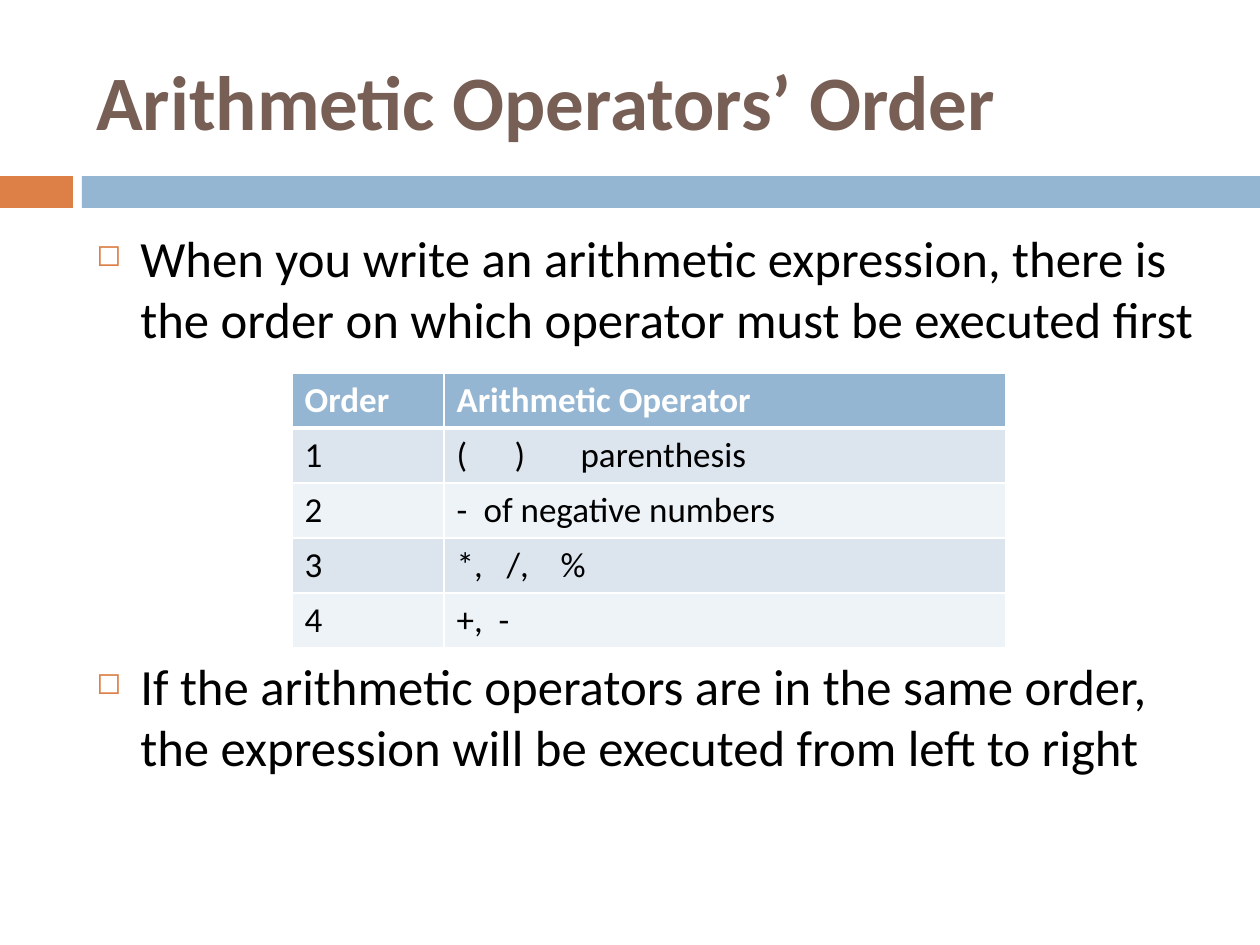
import dataclasses

import lxml.etree
import pptx
import pptx.dml.color
import pptx.enum.shapes
import pptx.enum.text
import pptx.oxml.ns
import pptx.util

PIXELS_PER_INCH = 126


@dataclasses.dataclass(frozen=True)
class Theme:
    """Hold the colours and type sizes of the slide."""
    font: str = "Calibri"
    title_color: str = "775F55"
    accent: str = "DD8047"
    blue: str = "94B6D2"
    white: str = "FFFFFF"
    black: str = "000000"
    bands: tuple = ("DCE5EE", "EEF3F7")
    title_size: int = 44
    body_size: int = 29
    table_size: int = 20


THEME = Theme()


def px(length):
    """Turn pixels into EMU."""
    return pptx.util.Emu(round(length * 914400 / PIXELS_PER_INCH))


def rgb(color):
    """Turn a hex string into a colour."""
    return pptx.dml.color.RGBColor.from_string(color)


def add_element(parent, tag, **attributes):
    """Append a DrawingML child and return it."""
    element = lxml.etree.SubElement(parent, pptx.oxml.ns.qn(tag))
    for name, value in attributes.items():
        element.set(name, str(value))
    return element


def style_font(paragraph, size, color, bold=False):
    """Set the font of a whole paragraph."""
    font = paragraph.font
    font.name = THEME.font
    font.size = pptx.util.Pt(size)
    font.bold = bold
    font.color.rgb = rgb(color)


def add_text_frame(slide, box):
    """Add a wrapping text box and return its text frame."""
    frame = slide.shapes.add_textbox(*map(px, box)).text_frame
    frame.word_wrap = True
    return frame


def add_title(slide, box, text):
    """Place the slide title."""
    frame = add_text_frame(slide, box)
    frame.vertical_anchor = pptx.enum.text.MSO_ANCHOR.MIDDLE
    paragraph = frame.paragraphs[0]
    paragraph.text = text
    style_font(paragraph, THEME.title_size, THEME.title_color, True)


def add_divider(slide, box, block_width, gap):
    """Place the accent block and the long bar beside it."""
    left, top, width, height = box
    bar_offset = block_width + gap
    parts = ((0, block_width, THEME.accent),
             (bar_offset, width - bar_offset, THEME.blue))
    for offset, part_width, color in parts:
        shape = slide.shapes.add_shape(
            pptx.enum.shapes.MSO_SHAPE.RECTANGLE,
            *map(px, (left + offset, top, part_width, height)))
        shape.shadow.inherit = False
        shape.fill.solid()
        shape.fill.fore_color.rgb = rgb(color)
        shape.line.fill.background()


def add_bullets(slide, box, texts, gap, indent):
    """Place bulleted paragraphs with a gap in pixels between them."""
    frame = add_text_frame(slide, box)
    frame.margin_right = 0
    for index, text in enumerate(texts):
        paragraph = frame.add_paragraph() if index else frame.paragraphs[0]
        paragraph.text = text
        paragraph.space_before = px(gap if index else 0)
        properties = paragraph._p.get_or_add_pPr()
        properties.set("marL", str(px(indent)))
        properties.set("indent", str(-px(indent)))
        bullet_color = add_element(properties, "a:buClr")
        add_element(bullet_color, "a:srgbClr", val=THEME.accent)
        add_element(properties, "a:buSzPct", val=60000)
        add_element(properties, "a:buChar", char="◻")
        style_font(paragraph, THEME.body_size, THEME.black)


def set_borders(cell, bottom_points):
    """Draw white borders with the given bottom weight."""
    weights = {"a:lnL": 1, "a:lnR": 1, "a:lnT": 1, "a:lnB": bottom_points}
    properties = cell._tc.get_or_add_tcPr()
    for tag, points in weights.items():
        line = add_element(properties, tag, w=pptx.util.Pt(points))
        add_element(add_element(line, "a:solidFill"), "a:srgbClr", val=THEME.white)


def add_tab_stops(paragraph, stops):
    """Set left tab stops in pixels."""
    tab_list = add_element(paragraph._p.get_or_add_pPr(), "a:tabLst")
    for stop in stops:
        add_element(tab_list, "a:tab", pos=px(stop), algn="l")


def add_order_table(slide, box, first_width, header, operators):
    """Place the table that numbers the operators by order."""
    rows = [(header, ())] + [
        ((str(order), text), stops)
        for order, (text, stops) in enumerate(operators, 1)]
    table = slide.shapes.add_table(len(rows), len(header), *map(px, box)).table
    table.horz_banding = False
    for column, width in zip(table.columns, (first_width, box[2] - first_width)):
        column.width = px(width)
    for row_index, (texts, stops) in enumerate(rows):
        is_header = row_index == 0
        fill = THEME.blue if is_header else THEME.bands[(row_index - 1) % 2]
        color = THEME.white if is_header else THEME.black
        for column_index, text in enumerate(texts):
            cell = table.cell(row_index, column_index)
            set_borders(cell, 3 if is_header else 1)
            cell.fill.solid()
            cell.fill.fore_color.rgb = rgb(fill)
            paragraph = cell.text_frame.paragraphs[0]
            paragraph.text = text
            if column_index and stops:
                add_tab_stops(paragraph, stops)
            style_font(paragraph, THEME.table_size, color, is_header)


def main():
    """Build and save the slide."""
    presentation = pptx.Presentation()
    presentation.slide_width = px(1260)
    presentation.slide_height = px(945)
    slide = presentation.slides.add_slide(presentation.slide_layouts[6])
    add_divider(slide, (0, 176, 1260, 32), 73, 9)
    add_title(slide, (84, 32, 1124, 136), "Arithmetic Operators’ Order")
    add_bullets(slide, (84, 221, 1124, 596), (
        "When you write an arithmetic expression, there is the order on which "
        "operator must be executed first",
        "If the arithmetic operators are in the same order, the expression "
        "will be executed from left to right",
    ), 306, 44)
    add_order_table(
        slide, (292, 373, 714, 275), 152, ("Order", "Arithmetic Operator"), (
            ("(\t)\tparenthesis", (58, 124)),
            ("-\tof negative numbers", (27,)),
            ("*,\t/,\t%", (50, 104)),
            ("+,\t-", (42,)),
        ))
    presentation.save("out.pptx")


if __name__ == "__main__":
    main()
